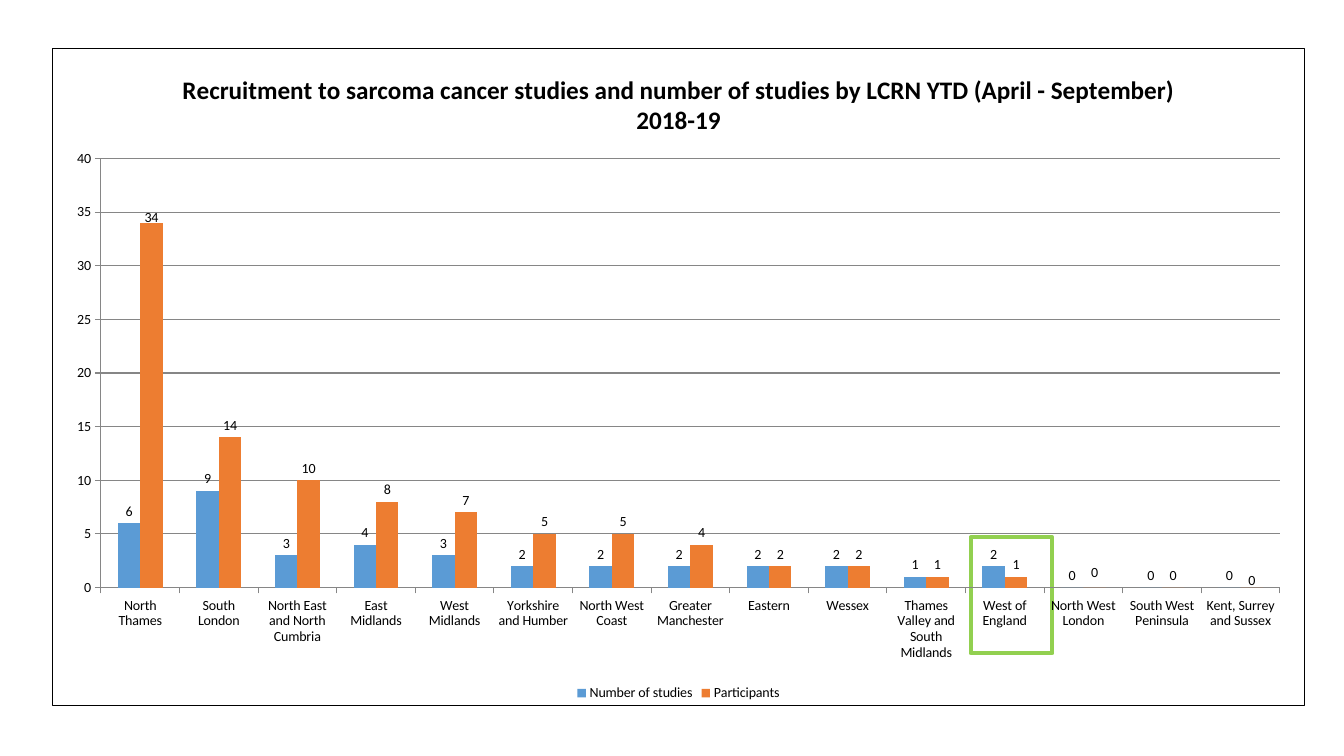
"""Build a slide charting sarcoma study recruitment by local research network."""
from dataclasses import dataclass, field

from lxml import etree
from pptx import Presentation
from pptx.chart.chart import Chart
from pptx.chart.data import CategoryChartData
from pptx.dml.color import RGBColor
from pptx.dml.line import LineFormat
from pptx.enum.chart import (XL_CHART_TYPE, XL_LABEL_POSITION,
                             XL_LEGEND_POSITION, XL_TICK_MARK)
from pptx.enum.shapes import MSO_SHAPE
from pptx.oxml import parse_xml
from pptx.oxml.ns import nsdecls, qn
from pptx.slide import Slide
from pptx.text.text import Font
from pptx.util import Cm, Pt

CLUSTERED = XL_CHART_TYPE.COLUMN_CLUSTERED
OUTSIDE_END = XL_LABEL_POSITION.OUTSIDE_END
BOTTOM = XL_LEGEND_POSITION.BOTTOM
TICK_OUT = XL_TICK_MARK.OUTSIDE
TICK_NONE = XL_TICK_MARK.NONE
RECTANGLE = MSO_SHAPE.RECTANGLE

BLACK, GREY, GREEN = "000000", "868686", "92D050"
TITLE = ("Recruitment to sarcoma cancer studies and number of studies "
         "by LCRN YTD (April - September) 2018-19")
NETWORKS = [
    "North Thames", "South London", "North East and North Cumbria",
    "East Midlands", "West Midlands", "Yorkshire and Humber",
    "North West Coast", "Greater Manchester", "Eastern", "Wessex",
    "Thames Valley and South Midlands", "West of England",
    "North West London", "South West Peninsula", "Kent, Surrey and Sussex",
]


@dataclass
class Measure:
    """A column series, with vertical label shifts as shares of chart height."""
    name: str
    values: list[int]
    color: str
    label_shifts: dict[int, float] = field(default_factory=dict)


MEASURES = [
    Measure("Number of studies", [6, 9, 3, 4, 3, 2, 2, 2, 2, 2, 1, 2, 0, 0, 0],
            "5B9BD5"),
    Measure("Participants", [34, 14, 10, 8, 7, 5, 5, 4, 2, 2, 1, 1, 0, 0, 0],
            "ED7D31", {0: 0.01, 12: -0.005, 14: 0.008}),
]


def rgb(color: str) -> RGBColor:
    """Turn a hex string into a colour."""
    return RGBColor.from_string(color)


def format_font(font: Font, size: float, bold: bool = False) -> None:
    """Set the black chart typeface."""
    font.name, font.size, font.bold = "Calibri", Pt(size), bold
    font.color.rgb = rgb(BLACK)


def format_line(line: LineFormat, color: str, width: float = 0.75) -> None:
    """Set the colour and width of a line."""
    line.color.rgb = rgb(color)
    line.width = Pt(width)


def manual_layout(**settings: object) -> etree._Element:
    """Return a chart layout element with the given settings."""
    parts = "".join(f'<c:{key} val="{value}"/>' for key, value in settings.items())
    return parse_xml(f'<c:layout {nsdecls("c")}><c:manualLayout>{parts}'
                     '</c:manualLayout></c:layout>')


def style_series(chart: Chart) -> None:
    """Colour the columns, show their values and shift single labels."""
    for series, measure in zip(chart.plots[0].series, MEASURES):
        series.format.fill.solid()
        series.format.fill.fore_color.rgb = rgb(measure.color)
        labels = series.data_labels
        labels.show_value = True
        labels.position = OUTSIDE_END
        for index, shift in measure.label_shifts.items():
            series.points[index].data_label.position = OUTSIDE_END
            label = chart.element.xpath(f".//c:dLbl[c:idx/@val='{index}']")[0]
            label.find(qn("c:idx")).addnext(manual_layout(x=0, y=shift))


def style_axes(chart: Chart) -> None:
    """Set scale, ticks and lines of both axes."""
    for axis in (chart.category_axis, chart.value_axis):
        axis.major_tick_mark = TICK_OUT
        axis.minor_tick_mark = TICK_NONE
        format_line(axis.format.line, GREY)
        format_font(axis.tick_labels.font, 10)
    scale = chart.value_axis
    scale.minimum_scale, scale.maximum_scale, scale.major_unit = 0, 40, 5
    scale.has_major_gridlines = True
    format_line(scale.major_gridlines.format.line, GREY)


def style_frame(chart: Chart) -> None:
    """Place the plot and give the unfilled chart area a thin border."""
    plot_area = chart.element.find(f".//{qn('c:plotArea')}")
    for layout in plot_area.findall(qn("c:layout")):
        plot_area.remove(layout)
    plot_area.insert(0, manual_layout(
        layoutTarget="inner", xMode="edge", yMode="edge",
        x=0.039, y=0.167, w=0.941, h=0.654))
    chart.element.find(qn("c:chart")).addnext(parse_xml(
        f'<c:spPr {nsdecls("c", "a")}><a:noFill/><a:ln w="{Pt(0.75)}"><a:solidFill>'
        f'<a:srgbClr val="{BLACK}"/></a:solidFill></a:ln></c:spPr>'))


def add_recruitment_chart(page: Slide) -> None:
    """Add the clustered column chart."""
    data = CategoryChartData()
    data.categories = NETWORKS
    for measure in MEASURES:
        data.add_series(measure.name, measure.values)
    chart = page.shapes.add_chart(CLUSTERED, Cm(1.3), Cm(1.22), Cm(31.6),
                                  Cm(16.56), data).chart
    format_font(chart.font, 10)
    chart.has_title = True
    para = chart.chart_title.text_frame.paragraphs[0]
    span = para.add_run()
    span.text = TITLE
    format_font(span.font, 18, bold=True)
    chart.chart_title.include_in_layout = False
    chart.has_legend = True
    chart.legend.position = BOTTOM
    chart.legend.include_in_layout = False
    format_font(chart.legend.font, 10)
    plot = chart.plots[0]
    plot.gap_width, plot.overlap, plot.vary_by_categories = 75, 0, False
    plot.gap_width = 150
    style_series(chart)
    style_axes(chart)
    style_frame(chart)


def add_highlight(page: Slide) -> None:
    """Frame the West of England columns."""
    box = page.shapes.add_shape(RECTANGLE, Cm(24.03), Cm(13.97), Cm(2.92), Cm(2.06))
    box.rotation = 90
    box.shadow.inherit = False
    box.fill.background()
    format_line(box.line, GREEN, 3)


def main() -> None:
    """Build and save the deck."""
    deck = Presentation()
    deck.slide_width, deck.slide_height = Cm(33.87), Cm(19.05)
    page = deck.slides.add_slide(deck.slide_layouts[6])
    add_highlight(page)
    add_recruitment_chart(page)
    deck.save("out.pptx")


if __name__ == "__main__":
    main()
